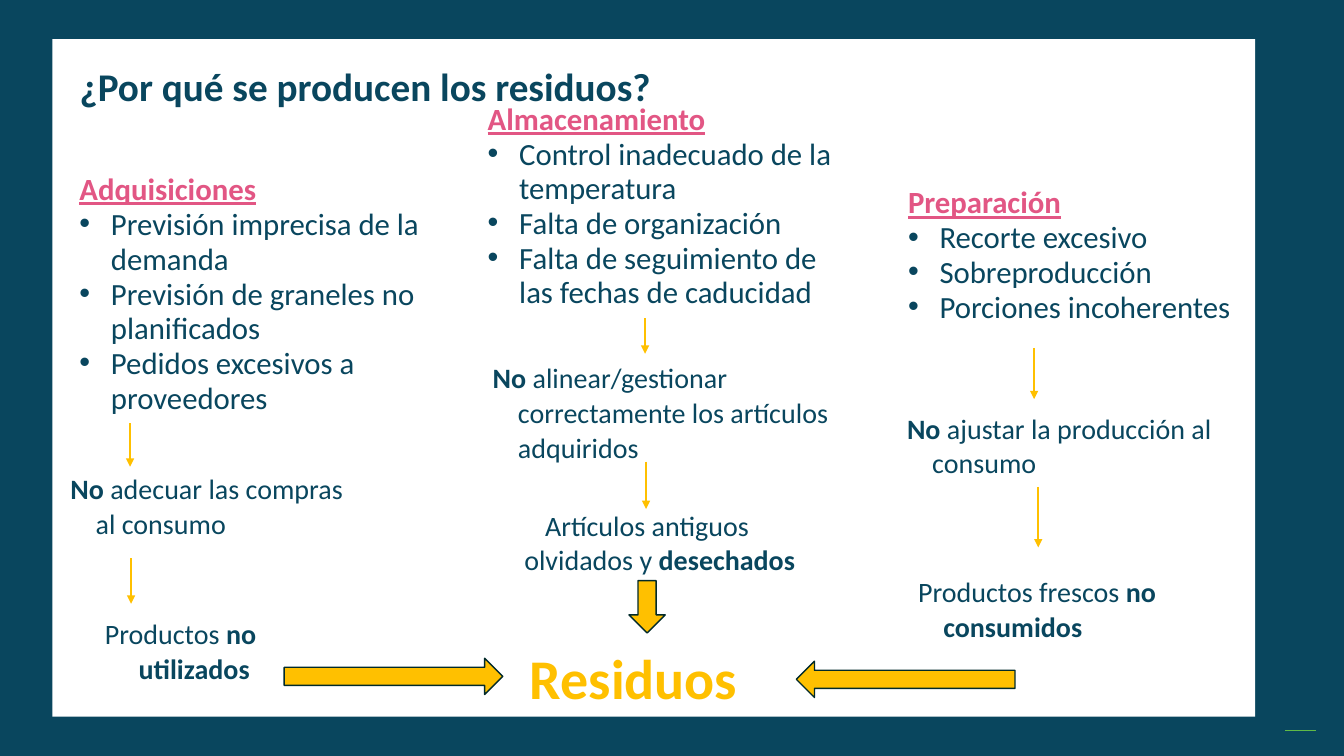
from lxml import etree
from pptx import Presentation
from pptx.dml.color import RGBColor
from pptx.enum.shapes import MSO_CONNECTOR, MSO_SHAPE
from pptx.enum.text import MSO_ANCHOR, PP_ALIGN
from pptx.oxml.ns import qn
from pptx.util import Pt

STRAIGHT = MSO_CONNECTOR.STRAIGHT
RECTANGLE, RIGHT_ARROW = MSO_SHAPE.RECTANGLE, MSO_SHAPE.RIGHT_ARROW
LEFT, CENTER, RIGHT = PP_ALIGN.LEFT, PP_ALIGN.CENTER, PP_ALIGN.RIGHT
TOP = MSO_ANCHOR.TOP

COLORS = {"navy": "09465E", "white": "FFFFFF", "pink": "E25684",
          "gold": "FFC000", "green": "60BA47", "outline": "012A2A"}
FONT = "Calibri"
LINE_PITCH = 24.8
STAGE_HEIGHT, RESULT_HEIGHT = 221.8, 63.4
HEADING_INDENT, BULLET_INDENT = 18, 22.5

TITLE = "¿Por qué se producen los residuos?"
WASTE = "Residuos"

STAGES = [
    ("Adquisiciones", (49.7, 119.5, 275.8),
     ["Previsión imprecisa de la demanda",
      "Previsión de graneles no planificados",
      "Pedidos excesivos a proveedores"]),
    ("Almacenamiento", (341.3, 69.1, 270),
     ["Control inadecuado de la temperatura",
      "Falta de organización",
      "Falta de seguimiento de las fechas de caducidad"]),
    ("Preparación", (641.5, 128.9, 248.4),
     ["Recorte excesivo", "Sobreproducción", "Porciones incoherentes"]),
]

RESULTS = [
    ((43.2, 332.6, 222.5), LEFT,
     [("No ", True), ("adecuar las compras al consumo", False)]),
    ((53.3, 436.3, 136.8), RIGHT,
     [("Productos ", False), ("no utilizados ", True)]),
    ((344.9, 253.4, 275.8), LEFT,
     [("No ", True),
      ("alinear/gestionar correctamente los artículos adquiridos", False)]),
    ((345.6, 358.6, 233.3), CENTER,
     [("Artículos antiguos olvidados y ", False), ("desechados", True)]),
    ((640.8, 289.4, 248.4), LEFT,
     [("No ", True), ("ajustar la producción al consumo", False)]),
    ((648.7, 406.1, 248.4), LEFT,
     [("Productos frescos ", False), ("no consumidos", True)]),
]

STEPS = [(92.9, 302.4, 333.4), (93.6, 398.9, 431.3),
         (460.8, 227.5, 252.7), (461.5, 329.8, 363.6),
         (738.7, 248.4, 285.1), (741.6, 347.8, 391)]

WASTE_ARROWS = [((568.8, 472.3, 156.2, 25.9), 180),
                ((203, 470.2, 156.2, 25.9), 0),
                ((443.5, 420.5, 37.4, 25.9), 90)]


def color(name):
    return RGBColor.from_string(COLORS[name])


def points(values):
    return [Pt(value) for value in values]


def style(paragraph, size, name, bold=None, underline=None):
    font = paragraph.font
    font.name, font.size = FONT, Pt(size)
    font.bold, font.underline = bold, underline
    font.color.rgb = color(name)


def hang(paragraph, indent, bullet=False):
    properties = paragraph._p.get_or_add_pPr()
    properties.set("marL", str(Pt(indent)))
    properties.set("indent", str(-Pt(indent)))
    paragraph.line_spacing = Pt(LINE_PITCH)
    if bullet:
        etree.SubElement(properties, qn("a:buFont")).set("typeface", "Arial")
        etree.SubElement(properties, qn("a:buChar")).set("char", "•")


def add_text_frame(box):
    frame = slide.shapes.add_textbox(*points(box)).text_frame
    frame.word_wrap = True
    return frame


def add_block(kind, box, fill):
    block = slide.shapes.add_shape(kind, *points(box))
    block.shadow.inherit = False
    block.fill.solid()
    block.fill.fore_color.rgb = color(fill)
    return block


def add_line(ends, name, width, arrow=False):
    line = slide.shapes.add_connector(STRAIGHT, *points(ends))
    line.line.color.rgb = color(name)
    line.line.width = Pt(width)
    if arrow:
        etree.SubElement(line.line._get_or_add_ln(),
                         qn("a:tailEnd")).set("type", "triangle")
    etree.SubElement(line._element.spPr, qn("a:effectLst"))


prs = Presentation()
prs.slide_width, prs.slide_height = Pt(960), Pt(540)
slide = prs.slides.add_slide(prs.slide_layouts[5])
slide.background.fill.solid()
slide.background.fill.fore_color.rgb = color("navy")

panel = add_block(RECTANGLE, (37.5, 28, 859, 484), "white")
panel.line.fill.background()
add_line((918, 522, 940.3, 522), "green", 1)

title = slide.shapes.title
title.left, title.top, title.width, title.height = points((49.7, 44.6, 800, 50))
title.text_frame.text = TITLE
title.text_frame.vertical_anchor = TOP
heading = title.text_frame.paragraphs[0]
heading.alignment, heading.line_spacing = LEFT, 0.9
style(heading, 28, "navy", True)
slide.shapes._spTree.append(title._element)

for stage, place, causes in STAGES:
    frame = add_text_frame((*place, STAGE_HEIGHT))
    name = frame.paragraphs[0]
    name.text = stage
    hang(name, HEADING_INDENT)
    style(name, 22, "pink", True, True)
    for text in causes:
        cause = frame.add_paragraph()
        cause.text = text
        hang(cause, BULLET_INDENT, True)
        style(cause, 22, "navy")

for place, alignment, parts in RESULTS:
    result = add_text_frame((*place, RESULT_HEIGHT)).paragraphs[0]
    result.alignment = alignment
    hang(result, HEADING_INDENT)
    style(result, 20, "navy")
    for text, bold in parts:
        run = result.add_run()
        run.text, run.font.bold = text, bold

for x, start, end in STEPS:
    add_line((x, start, x, end), "gold", 1.5, True)

waste = add_text_frame((371.5, 461.5, 172.8, 60)).paragraphs[0]
waste.text = WASTE
waste.line_spacing = 0.9
style(waste, 40, "gold", True)

for box, rotation in WASTE_ARROWS:
    arrow = add_block(RIGHT_ARROW, box, "gold")
    arrow.rotation = rotation
    arrow.line.color.rgb = color("outline")
    arrow.line.width = Pt(1)

prs.save("out.pptx")
